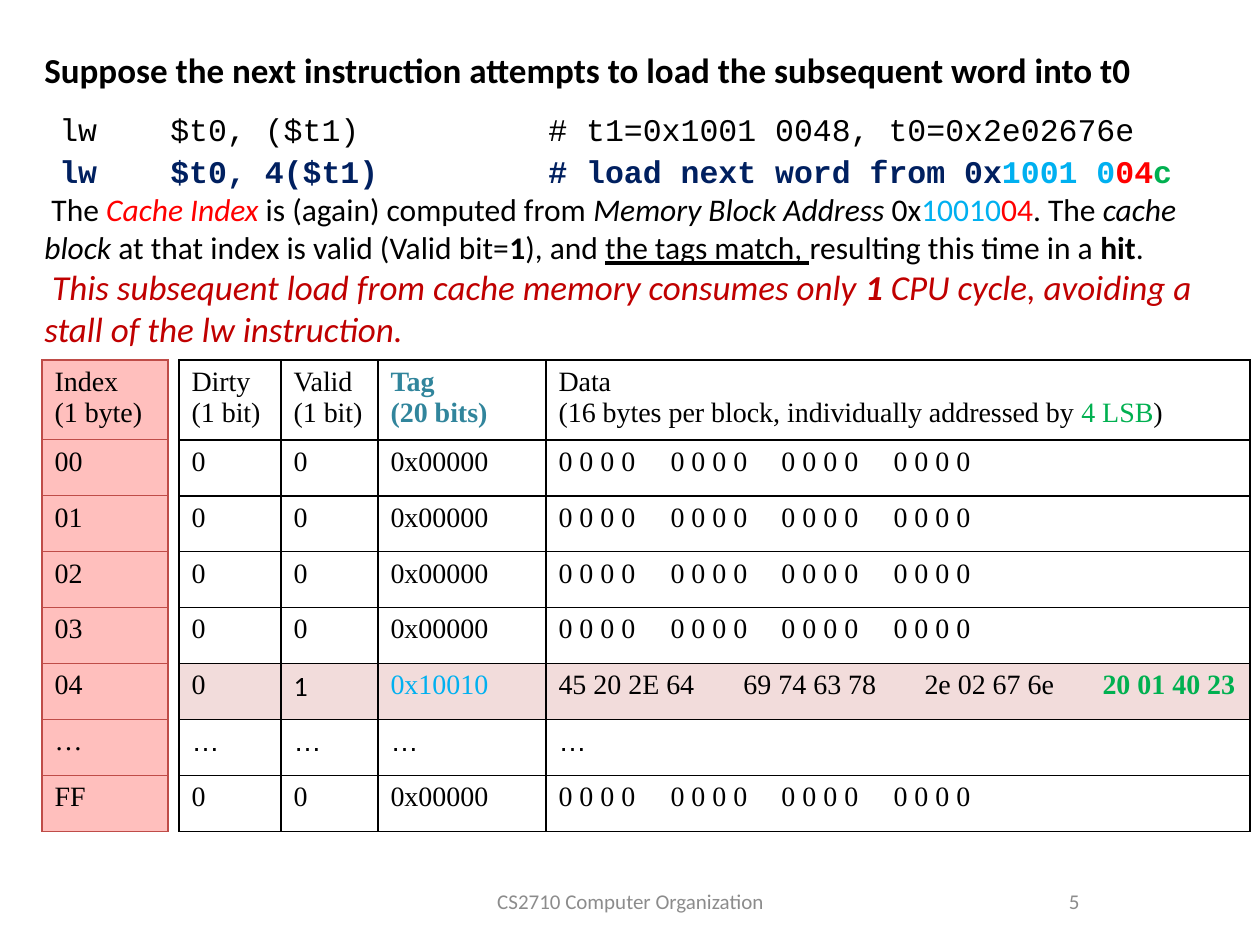
from lxml import etree
from pptx import Presentation
from pptx.dml.color import RGBColor
from pptx.enum.text import MSO_ANCHOR, PP_ALIGN
from pptx.oxml.ns import qn
from pptx.util import Pt

PX = 914400 // 126
LEFT, CENTER, RIGHT = PP_ALIGN.LEFT, PP_ALIGN.CENTER, PP_ALIGN.RIGHT
TOP, MIDDLE = MSO_ANCHOR.TOP, MSO_ANCHOR.MIDDLE

BLACK = RGBColor(0x00, 0x00, 0x00)
NAVY = RGBColor(0x00, 0x20, 0x60)
SKY = RGBColor(0x00, 0xB0, 0xF0)
RED = RGBColor(0xFF, 0x00, 0x00)
DARK_RED = RGBColor(0xC0, 0x00, 0x00)
GREEN = RGBColor(0x00, 0xB0, 0x50)
TEAL = RGBColor(0x31, 0x85, 0x9C)
GRAY = RGBColor(0x8C, 0x8C, 0x8C)
PINK = RGBColor(0xFF, 0xBF, 0xBD)
BLUSH = RGBColor(0xF2, 0xDC, 0xDB)
BRICK = RGBColor(0xBF, 0x4C, 0x48)

# Text formats
HEADING = {"name": "Calibri", "size": Pt(20), "bold": True}
CODE = {"name": "Courier New", "size": Pt(18)}
NEXT_CODE = CODE | {"bold": True, "color": NAVY}
BODY = {"name": "Calibri", "size": Pt(18)}
ITALIC = BODY | {"italic": True}
RESULT = {"name": "Calibri", "size": Pt(20), "italic": True, "color": DARK_RED}
FOOTER = {"name": "Calibri", "size": Pt(12), "color": GRAY}
CELL = {"name": "Times New Roman", "size": Pt(16)}
TAG_HEAD = CELL | {"bold": True, "color": TEAL}


class SlideBuilder:
    """Holds the current slide and draws its kinds of element in px."""

    def __init__(self, slide):
        self.slide = slide

    def paragraph(self, frame, runs, first, tabs=(), **layout):
        paragraph = frame.paragraphs[0] if first else frame.add_paragraph()
        if tabs:
            tab_list = etree.SubElement(paragraph._p.get_or_add_pPr(), qn("a:tabLst"))
            for position in tabs:
                etree.SubElement(tab_list, qn("a:tab"), pos=str(position * PX), algn="l")
        for key, value in layout.items():
            setattr(paragraph, key, value)
        for text, style in runs:
            run = paragraph.add_run()
            run.text = text
            style = {"bold": False, "color": BLACK} | style
            for key, value in style.items():
                if key == "color":
                    run.font.color.rgb = value
                else:
                    setattr(run.font, key, value)

    def text_box(self, box, paragraphs, anchor=MIDDLE):
        shape = self.slide.shapes.add_textbox(*(value * PX for value in box))
        frame = shape.text_frame
        frame.word_wrap = True
        frame.vertical_anchor = anchor
        for number, (runs, layout) in enumerate(paragraphs):
            self.paragraph(frame, runs, number == 0, **layout)

    def border(self, cell, color, points):
        properties = cell._tc.get_or_add_tcPr()
        for index, side in enumerate(("a:lnL", "a:lnR", "a:lnT", "a:lnB")):
            line = etree.Element(qn(side), w=str(int(Pt(points))))
            fill = etree.SubElement(line, qn("a:solidFill"))
            etree.SubElement(fill, qn("a:srgbClr"), val=str(color))
            properties.insert(index, line)

    def table(self, left, top, columns, heights, rows, line, fills, tabs):
        """Each cell is a list of paragraphs, and each paragraph a list of runs."""
        box = (left, top, sum(columns), sum(heights))
        frame = self.slide.shapes.add_table(
            len(rows), len(columns), *(value * PX for value in box))
        table = frame.table
        table.first_row = table.horz_banding = False
        for column, width in zip(table.columns, columns):
            column.width = width * PX
        for row, height in zip(table.rows, heights):
            row.height = height * PX
        for row_number, row in enumerate(rows):
            for column_number, paragraphs in enumerate(row):
                cell = table.cell(row_number, column_number)
                if fills[row_number] is None:
                    cell.fill.background()
                else:
                    cell.fill.solid()
                    cell.fill.fore_color.rgb = fills[row_number]
                self.border(cell, *line)
                for number, runs in enumerate(paragraphs):
                    stops = tabs[row_number] if any("\t" in text for text, _ in runs) else ()
                    self.paragraph(cell.text_frame, runs, number == 0, stops)


def plain(*lines, style=CELL):
    return [[(line, style)] for line in lines]


def main():
    presentation = Presentation()
    presentation.slide_width, presentation.slide_height = 1260 * PX, 945 * PX
    builder = SlideBuilder(presentation.slides.add_slide(presentation.slide_layouts[6]))

    # Heading, code and explanation
    code_tabs = (15, 126, 504)
    builder.text_box((32, 42, 1176, 314), [
        ([("Suppose the next instruction attempts to load the subsequent word into t0",
           HEADING)], {}),
        ([("\tlw\t$t0, ($t1)\t# t1=0x1001 0048, t0=0x2e02676e", CODE)],
         {"tabs": code_tabs, "space_before": Pt(11.5), "space_after": Pt(2.5)}),
        ([("\tlw\t$t0, 4($t1)\t# load next word from 0x", NEXT_CODE),
          ("1001 0", NEXT_CODE | {"color": SKY}),
          ("04", NEXT_CODE | {"color": RED}),
          ("c", NEXT_CODE | {"color": GREEN})], {"tabs": code_tabs}),
        ([(" The ", BODY), ("Cache Index ", ITALIC | {"color": RED}),
          ("is (again) computed from ", BODY), ("Memory Block Address", ITALIC),
          (" 0x", BODY), ("10010", BODY | {"color": SKY}),
          ("04", BODY | {"color": RED}), (". The ", BODY), ("cache block", ITALIC),
          (" at that index is valid (Valid bit=", BODY), ("1", BODY | {"bold": True}),
          ("), and ", BODY), ("the tags match, ", BODY | {"underline": True}),
          ("resulting this time in a ", BODY), ("hit", BODY | {"bold": True}),
          (".", BODY)], {}),
        ([(" This subsequent load from cache memory consumes only ", RESULT),
          ("1 ", RESULT | {"bold": True}),
          ("CPU cycle, avoiding a stall of the lw instruction.", RESULT)], {}),
    ], TOP)

    # Footer and slide number
    for left, width, text, alignment in (
            (431, 399, "CS2710 Computer Organization", CENTER), (903, 189, "5", RIGHT)):
        builder.text_box((left, 876, width, 50),
                         [([(text, FOOTER)], {"alignment": alignment})])

    # Cache contents
    heights = [75] + [56] * 7
    header = [
        plain("Dirty", "(1 bit)"), plain("Valid", "(1 bit)"),
        plain("Tag", "(20 bits)", style=TAG_HEAD),
        [[("Data", CELL)],
         [("(16 bytes per block, individually addressed by ", CELL),
          ("4 LSB", CELL | {"color": GREEN}), (")", CELL)]],
    ]
    empty = [plain(text) for text in ("0", "0", "0x00000", "\t".join(["0 0 0 0"] * 4))]
    hit = [
        plain("0"), plain("1", style=CELL | {"name": "Calibri"}),
        plain("0x10010", style=CELL | {"color": SKY}),
        [[("45 20 2E 64\t69 74 63 78\t2e 02 67 6e\t", CELL),
          ("20 01 40 23", CELL | {"bold": True, "color": GREEN})]],
    ]
    skipped = [plain("…", style=CELL | {"name": "Arial"})] * 4
    rows = [header] + [empty] * 4 + [hit, skipped, empty]
    builder.table(
        179, 360, (102, 97, 168, 704), heights, rows, (BLACK, 1),
        [BLUSH if row is hit else None for row in rows],
        [(185, 366, 544) if row is hit else (112, 223, 335) for row in rows])

    # Cache index
    indexes = [[plain("Index", "(1 byte)")]]
    indexes += [[plain(text)] for text in ("00", "01", "02", "03", "04", "…", "FF")]
    builder.table(42, 360, (126,), heights, indexes, (BRICK, 0.75), [PINK] * 8, [()] * 8)

    presentation.save("out.pptx")


if __name__ == "__main__":
    main()
